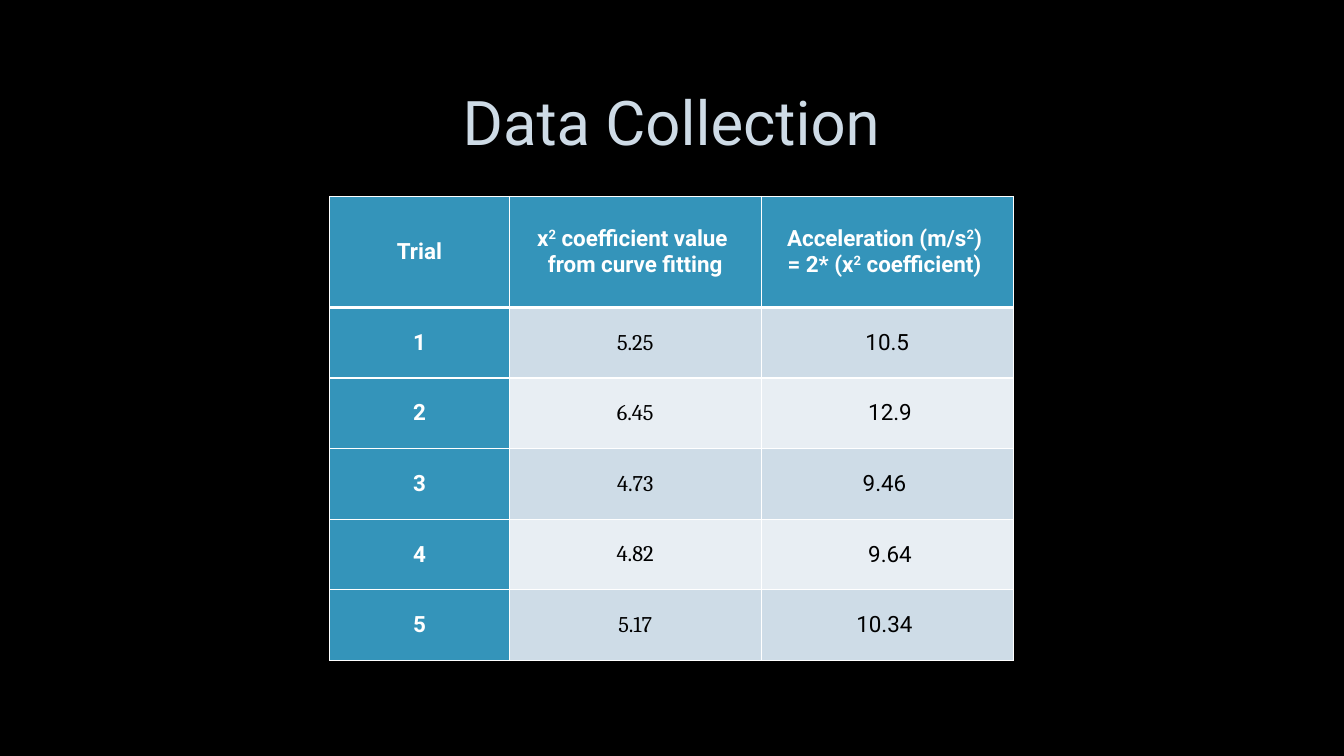
from typing import NamedTuple

from lxml.etree import SubElement
from pptx import Presentation
from pptx.dml.color import RGBColor
from pptx.enum.text import MSO_ANCHOR, PP_ALIGN
from pptx.oxml.ns import qn
from pptx.util import Inches, Pt

BLACK, WHITE, TEAL = "000000", "FFFFFF", "3494BA"
TITLE_COLOR, BANDS = "CEDBE6", ("CEDCE7", "E8EEF3")
COLUMN_WIDTHS = (1.78, 2.5, 2.5)
HEADER_HEIGHT, TRIAL_HEIGHT = 1.1, 0.7


class Piece(NamedTuple):
    text: str
    raised: bool = False
    breaks: bool = False


class Style(NamedTuple):
    font: str
    size: float
    color: str
    bold: bool = False


class Trial(NamedTuple):
    number: str
    coefficient: str
    acceleration: str


LABEL = Style("Roboto", 16, WHITE, True)
COEFFICIENT = Style("Cambria", 16, BLACK)
ACCELERATION = Style("Roboto", 16, BLACK)
SQUARE = Piece("2", raised=True)

HEADINGS = (
    (Piece("Trial"),),
    (Piece("x"), SQUARE, Piece(" coefficient value ", breaks=True),
     Piece("from curve fitting")),
    (Piece("Acceleration (m/s"), SQUARE, Piece(") ", breaks=True),
     Piece("= 2* (x"), SQUARE, Piece(" coefficient) ")),
)
TRIALS = (
    Trial("1", "5.25", "10.5"),
    Trial("2", "6.45", " 12.9"),
    Trial("3", "4.73", "9.46 "),
    Trial("4", "4.82", " 9.64"),
    Trial("5", "5.17", "10.34 "),
)


def rgb(color: str) -> RGBColor:
    return RGBColor.from_string(color)


def write(paragraph, pieces: tuple[Piece, ...], style: Style) -> None:
    paragraph.alignment = PP_ALIGN.CENTER
    for piece in pieces:
        run = paragraph.add_run()
        run.text = piece.text
        run.font.name = style.font
        run.font.size = Pt(style.size)
        run.font.bold = style.bold
        run.font.color.rgb = rgb(style.color)
        if piece.raised:
            run._r.get_or_add_rPr().set("baseline", "30000")
        if piece.breaks:
            paragraph.add_line_break()


def set_borders(cell, top: float, bottom: float) -> None:
    properties = cell._tc.get_or_add_tcPr()
    sides = (("lnL", 1), ("lnR", 1), ("lnT", top), ("lnB", bottom))
    for position, (side, width) in enumerate(sides):
        line = SubElement(properties, qn(f"a:{side}"), w=str(Pt(width)))
        solid = SubElement(line, qn("a:solidFill"))
        SubElement(solid, qn("a:srgbClr"), val=WHITE)
        properties.insert(position, line)


def fill_cell(cell, pieces: tuple[Piece, ...], style: Style, fill: str,
              top: float = 1, bottom: float = 1) -> None:
    cell.vertical_anchor = MSO_ANCHOR.MIDDLE
    cell.margin_left = cell.margin_right = Inches(0.07)
    cell.margin_top = cell.margin_bottom = 0
    cell.fill.solid()
    cell.fill.fore_color.rgb = rgb(fill)
    set_borders(cell, top, bottom)
    write(cell.text_frame.paragraphs[0], pieces, style)


def add_title(slide) -> None:
    title = slide.shapes.title
    title.left, title.top = Inches(1), Inches(0.67)
    title.width, title.height = Inches(11.32), Inches(1.06)
    title.text_frame.vertical_anchor = MSO_ANCHOR.MIDDLE
    write(title.text_frame.paragraphs[0], (Piece("Data Collection"),),
          Style("Roboto", 44, TITLE_COLOR))


def add_trials(slide) -> None:
    height = HEADER_HEIGHT + TRIAL_HEIGHT * len(TRIALS)
    table = slide.shapes.add_table(
        len(TRIALS) + 1, len(COLUMN_WIDTHS), Inches(3.27), Inches(1.95),
        Inches(sum(COLUMN_WIDTHS)), Inches(height)).table
    table.first_col = True
    for column, width in zip(table.columns, COLUMN_WIDTHS):
        column.width = Inches(width)
    table.rows[0].height = Inches(HEADER_HEIGHT)
    for column, heading in enumerate(HEADINGS):
        fill_cell(table.cell(0, column), heading, LABEL, TEAL, bottom=3)
    for row, trial in enumerate(TRIALS, 1):
        table.rows[row].height = Inches(TRIAL_HEIGHT)
        band = BANDS[(row - 1) % 2]
        looks = ((LABEL, TEAL), (COEFFICIENT, band), (ACCELERATION, band))
        for column, (value, (style, fill)) in enumerate(zip(trial, looks)):
            fill_cell(table.cell(row, column), (Piece(value),), style, fill,
                      top=3 if row == 1 else 1)


def main() -> None:
    """Build the data collection slide."""
    deck = Presentation()
    deck.slide_width, deck.slide_height = Inches(13.33), Inches(7.5)
    slide = deck.slides.add_slide(deck.slide_layouts[5])
    slide.background.fill.solid()
    slide.background.fill.fore_color.rgb = rgb(BLACK)
    add_title(slide)
    add_trials(slide)
    deck.save("out.pptx")


if __name__ == "__main__":
    main()
